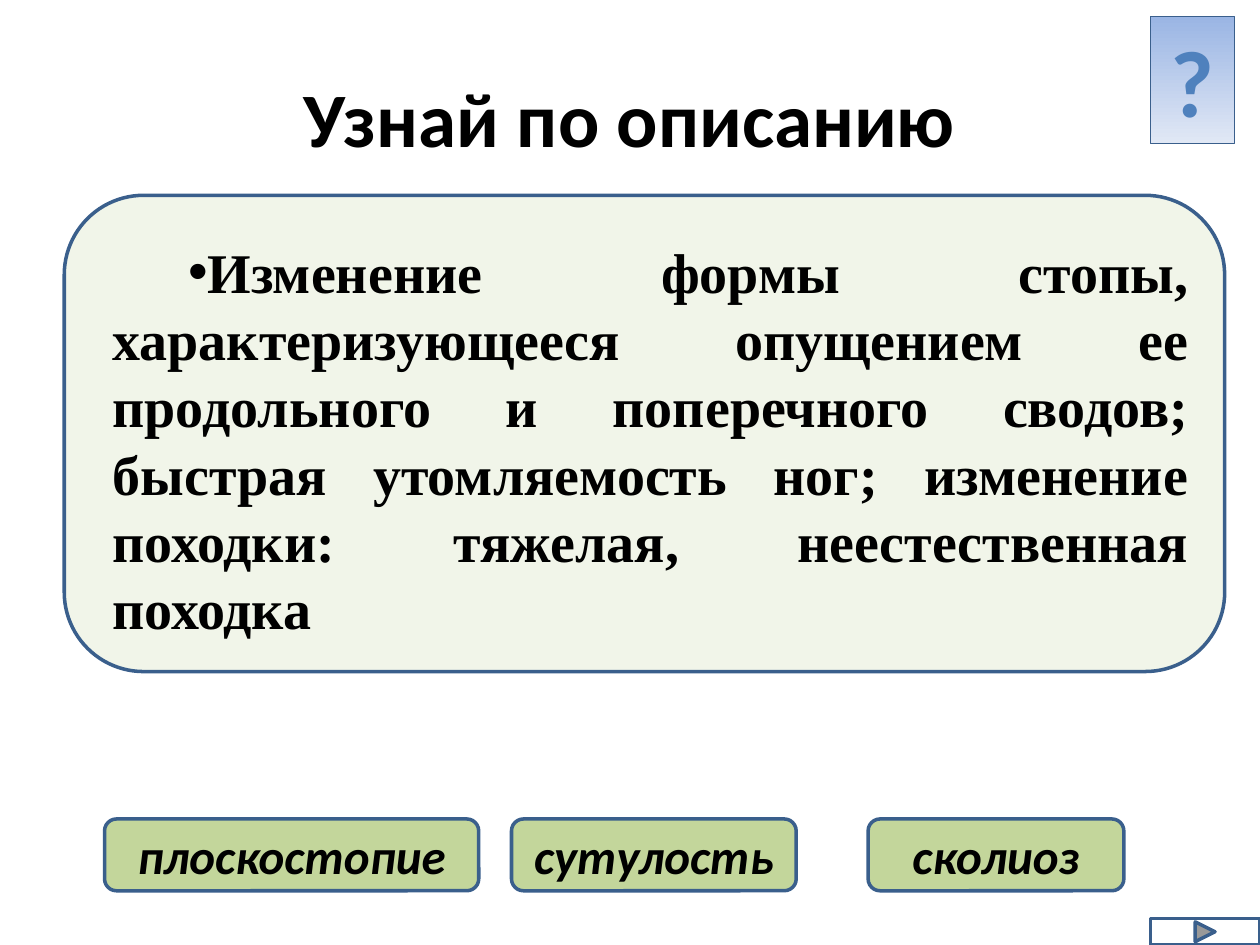
from lxml import etree
from pptx import Presentation
from pptx.dml.color import RGBColor
from pptx.enum.shapes import MSO_SHAPE as SHAPE
from pptx.enum.text import MSO_ANCHOR as ANCHOR, PP_ALIGN as ALIGN
from pptx.oxml.ns import qn
from pptx.util import Pt

BLACK = RGBColor(0, 0, 0)
WHITE = RGBColor(255, 255, 255)
BLUE = RGBColor(0x4F, 0x81, 0xBD)
OUTLINE = RGBColor(0x3A, 0x5F, 0x8C)
PALE_GREEN = RGBColor(0xEB, 0xF1, 0xDE)
GREEN = RGBColor(0xC3, 0xD6, 0x9B)
SKY = RGBColor(0x9A, 0xB5, 0xE4)
MIST = RGBColor(0xE1, 0xE8, 0xF5)


def add_box(kind, left, top, width, height, fill=None, line=2):
    sp = slide.shapes.add_shape(kind, Pt(left), Pt(top), Pt(width), Pt(height))
    sp.shadow.inherit = False
    if fill is not None:
        sp.fill.solid()
        sp.fill.fore_color.rgb = fill
    sp.line.color.rgb = OUTLINE
    sp.line.width = Pt(line)
    return sp


def write(sp, text, color=BLACK, align=ALIGN.CENTER, anchor=ANCHOR.MIDDLE, **fmt):
    tf = sp.text_frame
    tf.word_wrap = True
    tf.vertical_anchor = anchor
    p = tf.paragraphs[0]
    p.alignment = align
    r = p.add_run()
    r.text = text
    for name, value in {"name": "Calibri", "bold": True, **fmt}.items():
        setattr(r.font, name, value)
    r.font.color.rgb = color
    return p


prs = Presentation()
prs.slide_width, prs.slide_height = Pt(720), Pt(540)
slide = prs.slides.add_slide(prs.slide_layouts[5])

title = slide.shapes.title
title.left, title.top, title.width, title.height = Pt(36), Pt(21.6), Pt(648), Pt(90)
write(title, "Узнай по описанию", size=Pt(44))

badge = add_box(SHAPE.RECTANGLE, 657.36, 9.36, 48.24, 72.72, line=0.75)
badge.fill.gradient()
badge.fill.gradient_angle = 270
for stop, color, position in zip(badge.fill.gradient_stops, (SKY, MIST), (0, 1)):
    stop.color.rgb = color
    stop.position = position
write(badge, "?", BLUE, anchor=ANCHOR.TOP, size=Pt(54))

card = add_box(SHAPE.ROUNDED_RECTANGLE, 36.72, 111.6, 663.12, 272.16, PALE_GREEN)
color = card.fill._xPr.find(qn("a:solidFill"))[0]
etree.SubElement(color, qn("a:alpha"), val="65000")
card.text_frame.margin_top = Pt(10)
p = write(
    card,
    "Изменение формы стопы, характеризующееся опущением ее продольного и "
    "поперечного сводов; быстрая утомляемость ног; изменение походки: "
    "тяжелая, неестественная походка",
    align=ALIGN.JUSTIFY, name="Times New Roman", size=Pt(32))
p.line_spacing = Pt(38.4)
pPr = p._p.get_or_add_pPr()
pPr.set("marL", str(Pt(7.2)))
pPr.set("indent", str(Pt(43.2)))
etree.SubElement(pPr, qn("a:buFont"), typeface="Arial")
etree.SubElement(pPr, qn("a:buChar"), char="•")

for text, left, width in (
    ("плоскостопие", 59.76, 213.84),
    ("сутулость", 292.32, 162.72),
    ("сколиоз", 496.08, 146.16),
):
    answer = add_box(SHAPE.ROUNDED_RECTANGLE, left, 468, width, 41.04, GREEN)
    write(answer, text, size=Pt(28), italic=True)

add_box(SHAPE.ACTION_BUTTON_FORWARD_OR_NEXT, 657.36, 524.88, 62.64, 15.12, WHITE)

prs.save("out.pptx")
